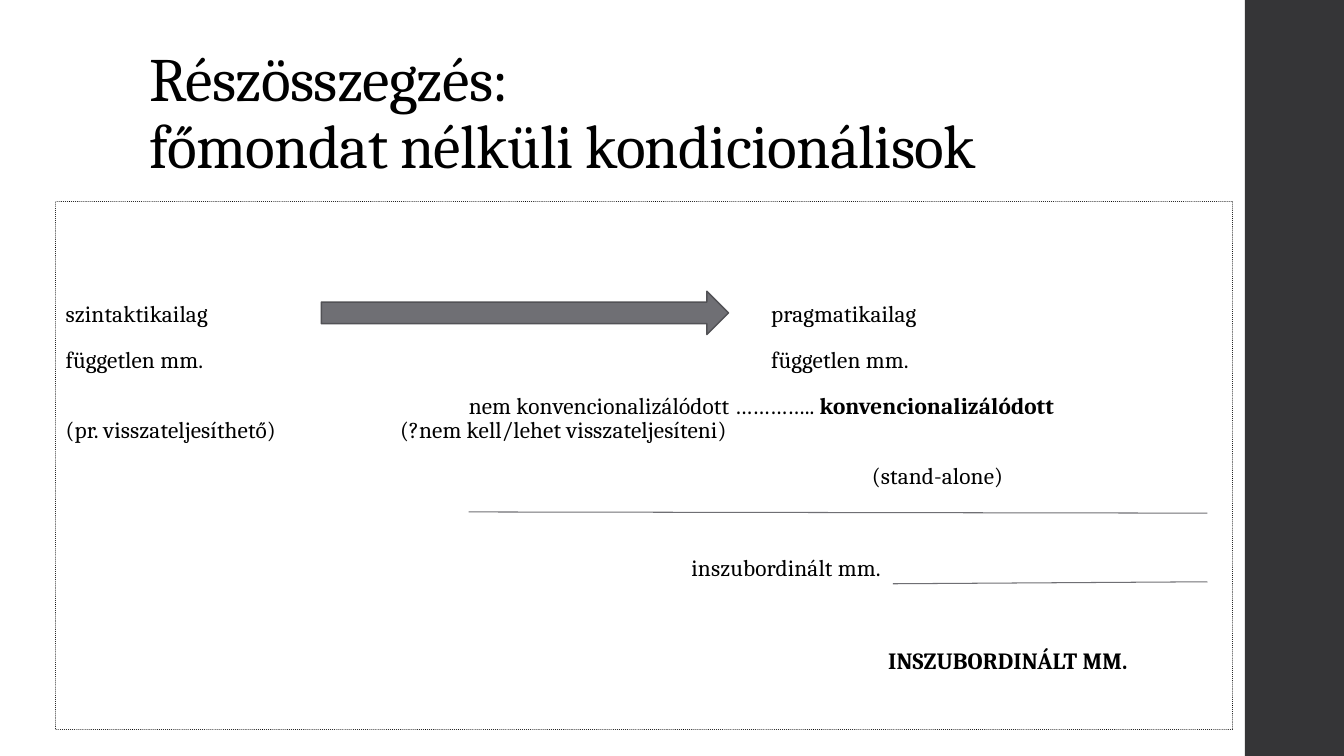
from lxml import etree
from pptx import Presentation, util as u
from pptx.dml.color import RGBColor
from pptx.enum import dml, shapes, text
from pptx.oxml.ns import qn

HUES = {"ink": "000000", "band": "353537", "arrow": "6F6F74", "edge": "525256"}
FONT = "Cambria"
STEP = 33  # points from one row to the next

# Rows: space before, space after, left margin and tab width in cm, runs of (words, bold)
ROWS = [
    (0, 2, 0, 17.78, [("szintaktikailag\tpragmatikailag", False)]),
    (14, 2, 0, 17.78, [("független mm.\tfüggetlen mm.", False)]),
    (14, 0, 10.16, 2.54, [("nem konvencionalizálódott ………….. ", False),
                          ("konvencionalizálódott", True)]),
    (0, 2, 0, 8.43, [("(pr. visszateljesíthető)\t(?nem kell/lehet visszateljesíteni)", False)]),
    (14, 2, 20.32, 2.54, [("(stand-alone)", False)]),
    (14 + STEP, 2, 15.77, 2.54, [("inszubordinált mm.", False)]),
    (14 + STEP, 2, 20.73, 2.54, [("INSZUBORDINÁLT MM.", True)]),
]
# Rules: start x, start y, end x, end y in cm from the frame's corner
RULES = [(10.41, 7.82, 29.03, 7.85), (21.1, 9.63, 29.03, 9.58)]


def tint(name):
    return RGBColor.from_string(HUES[name])


def apply(obj, vals):
    for key, val in vals.items():
        setattr(obj, key, val)


def place(shape, box):
    apply(shape, dict(zip(("left", "top", "width", "height"), map(u.Cm, box))))


def style(run, size, track, bold=False):
    """Format a run; track is letter spacing in hundredths of a point."""
    apply(run.font, {"name": FONT, "size": u.Pt(size), "bold": bold})
    run.font.color.rgb = tint("ink")
    run.font._element.set("spc", str(track))


def block(slide, kind, box, fill, edge=None):
    shape = slide.shapes.add_shape(kind, *map(u.Cm, box))
    shape.shadow.inherit = False
    shape.fill.solid()
    shape.fill.fore_color.rgb = tint(fill)
    if edge:
        shape.line.color.rgb = tint(edge)
        shape.line.width = u.Pt(1.1)
    else:
        shape.line.fill.background()


def rule(slide, ends):
    line = slide.shapes.add_connector(shapes.MSO_CONNECTOR.STRAIGHT, *map(u.Cm, ends))
    line.line.color.rgb = tint("arrow")
    line.line.width = u.Pt(0.75)
    etree.SubElement(line._element.spPr, qn("a:effectLst"))


def indent(para, margin, tab):
    """Drop the bullet; set left margin and tab width in cm."""
    props = para._p.get_or_add_pPr()
    for key, val in {"marL": margin, "indent": 0, "defTabSz": tab}.items():
        props.set(key, str(int(u.Cm(val))))
    etree.SubElement(props, qn("a:buNone"))


def head(slide, box):
    title = slide.shapes.title
    place(title, box)
    frame = title.text_frame
    apply(frame, {"word_wrap": True, "auto_size": text.MSO_AUTO_SIZE.NONE,
                  "vertical_anchor": text.MSO_ANCHOR.BOTTOM})
    frame.text = "Részösszegzés:\vfőmondat nélküli kondicionálisok"
    para = frame.paragraphs[0]
    apply(para, {"alignment": text.PP_ALIGN.LEFT, "line_spacing": 0.9})
    for run in para.runs:
        style(run, 44, -50)


def chart(slide, box):
    """Framed body text with the arrow and the two rules."""
    body = slide.placeholders[1]
    place(body, box)
    body.line.color.rgb = tint("ink")
    apply(body.line, {"width": u.Pt(0.75), "dash_style": dml.MSO_LINE.ROUND_DOT})
    body._element.spPr.find(qn("a:ln")).set("cap", "rnd")
    frame = body.text_frame
    apply(frame, {"word_wrap": True, "auto_size": text.MSO_AUTO_SIZE.NONE,
                  "vertical_anchor": text.MSO_ANCHOR.TOP, "margin_top": u.Cm(2.56)})
    for num, (above, below, margin, tab, runs) in enumerate(ROWS):
        para = frame.add_paragraph() if num else frame.paragraphs[0]
        apply(para, {"alignment": text.PP_ALIGN.LEFT, "line_spacing": 0.85,
                     "space_before": u.Pt(above), "space_after": u.Pt(below)})
        indent(para, margin, tab)
        for words, bold in runs:
            run = para.add_run()
            run.text = words
            style(run, 16.6, 10, bold)
    left, top = box[:2]
    block(slide, shapes.MSO_SHAPE.RIGHT_ARROW, (left + 6.7, top + 2.26, 10.26, 1.09),
          "arrow", "edge")
    for x1, y1, x2, y2 in RULES:
        rule(slide, (left + x1, top + y1, left + x2, top + y2))


def main():
    deck = Presentation()
    apply(deck, {"slide_width": u.Cm(33.87), "slide_height": u.Cm(19.05)})
    slide = deck.slides.add_slide(deck.slide_layouts[1])
    block(slide, shapes.MSO_SHAPE.RECTANGLE, (31.37, 0, 2.5, 19.05), "band")
    head(slide, (3.52, 1.02, 26.92, 3.68))
    chart(slide, (1.4, 5.08, 29.67, 13.31))
    deck.save("out.pptx")


if __name__ == "__main__":
    main()
